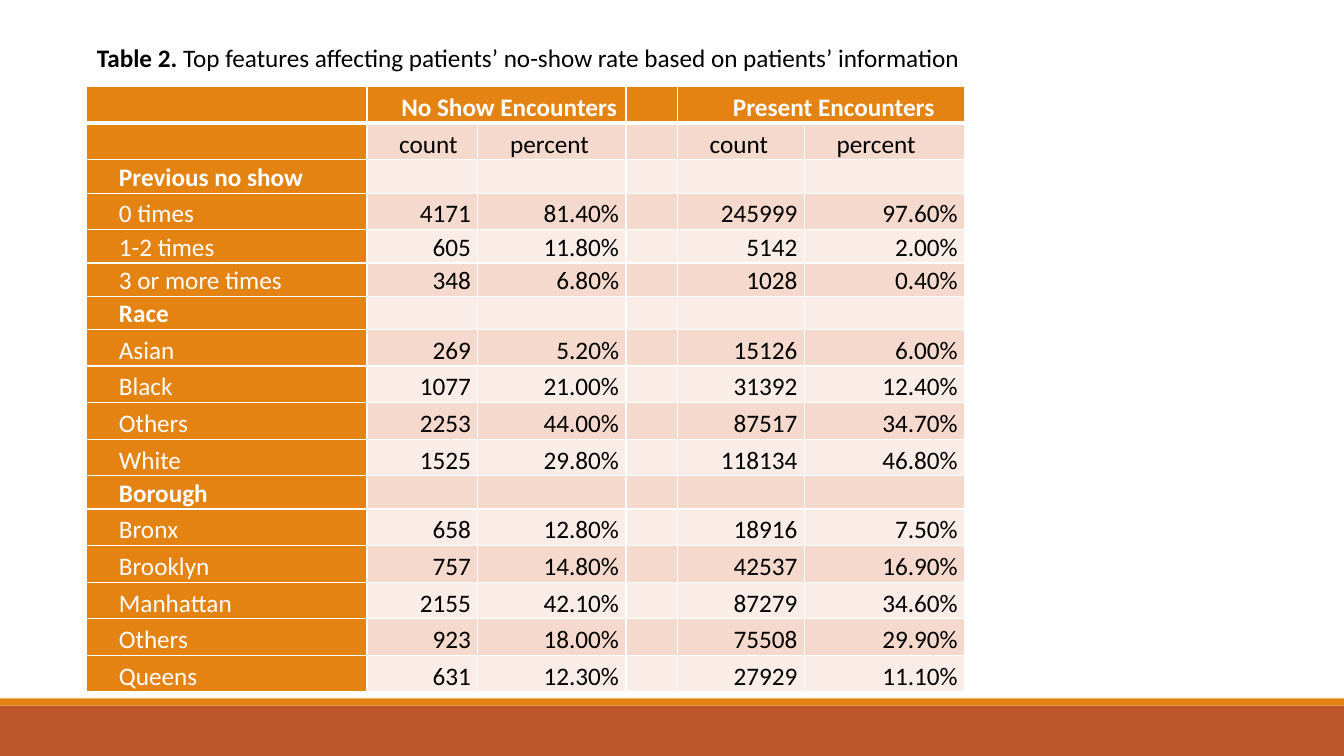
import pptx
import pptx.dml.color
import pptx.enum.shapes
import pptx.enum.text
import pptx.oxml
import pptx.oxml.ns
import pptx.util

Inches = pptx.util.Inches
Pt = pptx.util.Pt
ALIGN = pptx.enum.text.PP_ALIGN
ANCHOR = pptx.enum.text.MSO_ANCHOR

FONT = "Calibri"
COLORS = {
    "orange": "E48312",
    "rust": "BD582C",
    "dark band": "F5D9CC",
    "light band": "FAEDE7",
    "white": "FFFFFF",
    "black": "000000",
}
CAPTION = [
    ("Table 2. ", True),
    ("Top features affecting patients’ no-show rate based on patients’ information", False),
]
COLUMN_WIDTHS = [2.78, 1.1, 1.47, 0.51, 1.26, 1.59]
SHORT_ROW = 0.33
SHORT_ROWS = {2, 4, 5, 6, 11}
HEADER_ROWS = [
    ("", "No Show Encounters", "", "", "Present Encounters", ""),
    ("", "count", "percent", "", "count", "percent"),
]
BODY_ROWS = [
    ("Previous no show",),
    ("0 times", "4171", "81.40%", "", "245999", "97.60%"),
    ("1-2 times", "605", "11.80%", "", "5142", "2.00%"),
    ("3 or more times", "348", "6.80%", "", "1028", "0.40%"),
    ("Race",),
    ("Asian", "269", "5.20%", "", "15126", "6.00%"),
    ("Black", "1077", "21.00%", "", "31392", "12.40%"),
    ("Others", "2253", "44.00%", "", "87517", "34.70%"),
    ("White", "1525", "29.80%", "", "118134", "46.80%"),
    ("Borough",),
    ("Bronx", "658", "12.80%", "", "18916", "7.50%"),
    ("Brooklyn", "757", "14.80%", "", "42537", "16.90%"),
    ("Manhattan", "2155", "42.10%", "", "87279", "34.60%"),
    ("Others", "923", "18.00%", "", "75508", "29.90%"),
    ("Queens", "631", "12.30%", "", "27929", "11.10%"),
]


def rgb(name):
    return pptx.dml.color.RGBColor.from_string(COLORS[name])


def add_run(paragraph, text, color, bold):
    run = paragraph.add_run()
    run.text = text
    run.font.name = FONT
    run.font.size = Pt(18)
    run.font.bold = bold
    run.font.color.rgb = rgb(color)


def add_caption(slide, left, top, width, height):
    title = slide.shapes.title
    title.left, title.top = Inches(left), Inches(top)
    title.width, title.height = Inches(width), Inches(height)
    frame = title.text_frame
    frame.word_wrap = True
    frame.auto_size = pptx.enum.text.MSO_AUTO_SIZE.SHAPE_TO_FIT_TEXT
    frame.vertical_anchor = ANCHOR.TOP
    paragraph = frame.paragraphs[0]
    paragraph.alignment = ALIGN.LEFT
    for text, bold in CAPTION:
        add_run(paragraph, text, "black", bold)


def add_footer_bands(slide, left, top, width, height):
    """Draw a thin orange strip above a rust band."""
    strip = 0.07
    bands = [("rust", top + strip, height - strip), ("orange", top, strip)]
    for color, band_top, band_height in bands:
        band = slide.shapes.add_shape(
            pptx.enum.shapes.MSO_SHAPE.RECTANGLE,
            Inches(left), Inches(band_top), Inches(width), Inches(band_height))
        band.shadow.inherit = False
        band.fill.solid()
        band.fill.fore_color.rgb = rgb(color)
        band.line.fill.background()


def set_borders(cell, row):
    """Rule the cell in white, thicker between the first two rows."""
    widths = {"L": 1, "R": 1, "T": 3 if row == 1 else 1, "B": 3 if row == 0 else 1}
    properties = cell._tc.get_or_add_tcPr()
    for side, points in widths.items():
        properties.append(pptx.oxml.parse_xml(
            f'<a:ln{side} {pptx.oxml.ns.nsdecls("a")} w="{Pt(points)}">'
            f'<a:solidFill><a:srgbClr val="{COLORS["white"]}"/></a:solidFill>'
            f'</a:ln{side}>'))


def cell_fill(row, column):
    if row == 0 or column == 0:
        return "orange"
    return "dark band" if row % 2 else "light band"


def cell_alignment(row, column):
    if row == 0:
        return ALIGN.CENTER
    return ALIGN.LEFT if row == 1 or column == 0 else ALIGN.RIGHT


def format_cell(cell, row, column, text, bold):
    set_borders(cell, row)
    fill = cell_fill(row, column)
    cell.fill.solid()
    cell.fill.fore_color.rgb = rgb(fill)
    cell.margin_left = cell.margin_right = Inches(0.07)
    cell.margin_top = cell.margin_bottom = 0
    cell.vertical_anchor = ANCHOR.BOTTOM
    if text:
        paragraph = cell.text_frame.paragraphs[0]
        paragraph.alignment = cell_alignment(row, column)
        paragraph.line_spacing = 1.07
        paragraph_properties = paragraph._p.get_or_add_pPr()
        paragraph_properties.set("marL", "0")
        paragraph_properties.set("indent", str(Inches(0.25)))
        add_run(paragraph, text, "white" if fill == "orange" else "black", bold)


def add_encounter_table(slide, left, top, width, height):
    rows = HEADER_ROWS + BODY_ROWS
    table = slide.shapes.add_table(
        len(rows), len(COLUMN_WIDTHS),
        Inches(left), Inches(top), Inches(width), Inches(height)).table
    table.first_row = table.horz_banding = False
    for column, column_width in enumerate(COLUMN_WIDTHS):
        table.columns[column].width = Inches(column_width)
    tall_row = (height - SHORT_ROW * len(SHORT_ROWS)) / (len(rows) - len(SHORT_ROWS))
    for row, texts in enumerate(rows):
        table.rows[row].height = Inches(SHORT_ROW if row in SHORT_ROWS else tall_row)
        bold = row == 0 or len(texts) == 1
        for column in range(len(COLUMN_WIDTHS)):
            text = texts[column] if column < len(texts) else ""
            format_cell(table.cell(row, column), row, column, text, bold)
    for column in (1, 4):
        table.cell(0, column).merge(table.cell(0, column + 1))


def main():
    presentation = pptx.Presentation()
    presentation.slide_width = Inches(13.33)
    presentation.slide_height = Inches(7.5)
    slide = presentation.slides.add_slide(presentation.slide_layouts[5])
    add_footer_bands(slide, 0, 6.93, 13.33, 0.57)
    add_encounter_table(slide, 0.86, 0.86, sum(COLUMN_WIDTHS), 6.01)
    add_caption(slide, 0.86, 0.37, 8.82, 0.4)
    presentation.save("out.pptx")


if __name__ == "__main__":
    main()
